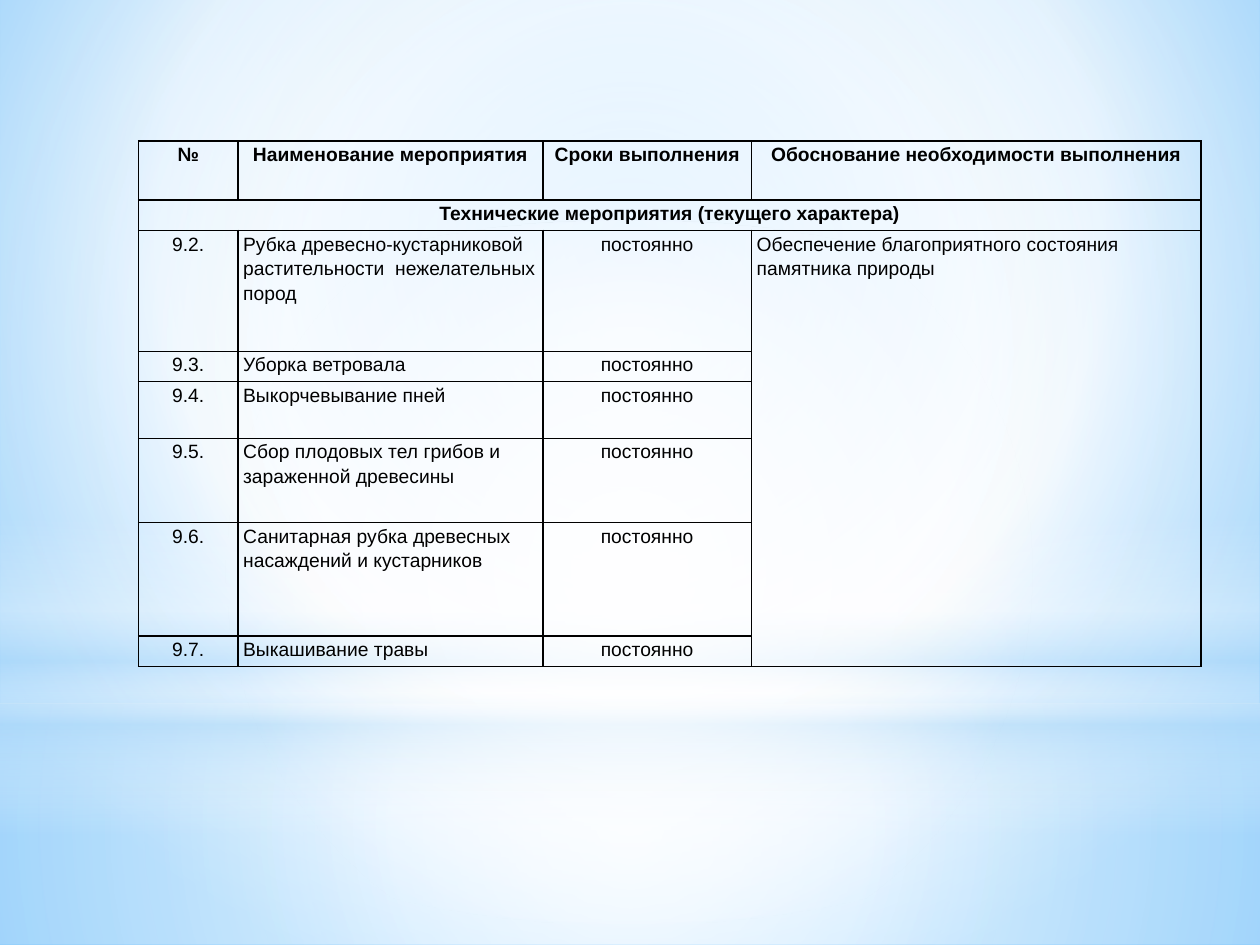
from dataclasses import dataclass
from typing import Any

from lxml.etree import SubElement
from pptx import Presentation
from pptx.dml.color import RGBColor
from pptx.enum.shapes import MSO_SHAPE as Preset
from pptx.enum.text import PP_ALIGN as Align
from pptx.oxml.ns import qn
from pptx.util import Pt

INK = "000000"
WHITE = "FFFFFF"
SKY = "B4DCFA"
CENTRE = (50, 50, 50, 50)
CELL_FORMAT = {"margin_left": Pt(3), "margin_right": Pt(3),
               "margin_top": 0, "margin_bottom": 0}
FONT_FORMAT = {"name": "Arial", "size": Pt(11)}
COLUMN_WIDTHS = (56.8, 174.3, 119.2, 256.8)
HEADINGS = ("№", "Наименование мероприятия", "Сроки выполнения",
            "Обоснование необходимости выполнения")
SECTION = "Технические мероприятия (текущего характера)"
TERM = "постоянно"
REASON = "Обеспечение благоприятного состояния памятника природы"


@dataclass(frozen=True)
class Stop:
    position: int
    colour: str
    opacity: int = 100


@dataclass(frozen=True)
class Glow:
    preset: Preset
    top: float
    height: float
    stops: tuple[Stop, ...]
    focus: tuple[int, ...] | None = CENTRE


@dataclass(frozen=True)
class Measure:
    title: str
    height: float


BACKDROP = (Stop(0, "9ED5FF"), Stop(60, WHITE), Stop(100, "5BB9FF"))
GLOWS = (
    Glow(Preset.RECTANGLE, 401.8, 138.2,
         (Stop(0, WHITE, 91), Stop(37, WHITE, 76), Stop(100, SKY, 79))),
    Glow(Preset.RECTANGLE, 0, 401.8,
         (Stop(0, WHITE, 89), Stop(48, WHITE, 62), Stop(100, SKY, 79))),
    Glow(Preset.RECTANGLE, 296.6, 180,
         (Stop(0, WHITE, 0), Stop(29, WHITE, 30), Stop(45, SKY, 40),
          Stop(55, WHITE, 26), Stop(65, SKY, 60), Stop(100, WHITE, 0)), None),
    Glow(Preset.OVAL, 126, 401.8, (Stop(0, WHITE), Stop(56, WHITE, 0))),
)
MEASURES = (
    Measure("Рубка древесно-кустарниковой растительности  нежелательных пород", 69.1),
    Measure("Уборка ветровала", 17.3),
    Measure("Выкорчевывание пней", 32.4),
    Measure("Сбор плодовых тел грибов и зараженной древесины", 48.2),
    Measure("Санитарная рубка древесных насаждений и кустарников", 64.8),
    Measure("Выкашивание травы", 17.3),
)
ROW_HEIGHTS = (33.8, 17.3, *(measure.height for measure in MEASURES))


def rgb(colour: str) -> RGBColor:
    return RGBColor.from_string(colour)


def apply_format(target: Any, values: dict[str, Any]) -> None:
    for attribute, value in values.items():
        setattr(target, attribute, value)


def set_gradient(owner: Any, element: Any, stops: tuple[Stop, ...],
                 focus: tuple[int, ...] | None) -> None:
    owner.fill.gradient()
    gradient = next(element.iter(qn("a:gradFill")))
    for child in list(gradient):
        gradient.remove(child)
    stop_list = SubElement(gradient, qn("a:gsLst"))
    for stop in stops:
        mark = SubElement(stop_list, qn("a:gs"), pos=str(stop.position * 1000))
        colour = SubElement(mark, qn("a:srgbClr"), val=stop.colour)
        if stop.opacity < 100:
            SubElement(colour, qn("a:alpha"), val=str(stop.opacity * 1000))
    if focus is None:
        SubElement(gradient, qn("a:lin"), ang="5400000", scaled="0")
    else:
        circle = SubElement(gradient, qn("a:path"), {"path": "circle"})
        SubElement(circle, qn("a:fillToRect"),
                   {side: str(share * 1000) for side, share in zip("ltrb", focus)})


def draw_glow(slide: Any, glow: Glow) -> None:
    light = slide.shapes.add_shape(glow.preset, 0, Pt(glow.top), Pt(720), Pt(glow.height))
    light.shadow.inherit = False
    light.line.fill.background()
    set_gradient(light, light.element, glow.stops, glow.focus)


def draw_borders(cell: Any) -> None:
    properties = cell._tc.get_or_add_tcPr()
    for side in "LRTB":
        border = SubElement(properties, qn(f"a:ln{side}"), w=str(Pt(1)))
        solid = SubElement(border, qn("a:solidFill"))
        SubElement(solid, qn("a:srgbClr"), val=INK)


def write_cell(cell: Any, wording: str, align: Align, bold: bool = False) -> None:
    paragraph = cell.text_frame.paragraphs[0]
    apply_format(paragraph, {"alignment": align, "line_spacing": 1.15})
    run = paragraph.add_run()
    run.text = wording
    apply_format(run.font, FONT_FORMAT | {"bold": bold})
    run.font.color.rgb = rgb(INK)


def draw_plan(slide: Any) -> None:
    plan = slide.shapes.add_table(
        len(ROW_HEIGHTS), len(COLUMN_WIDTHS), Pt(79.2), Pt(80.6),
        Pt(sum(COLUMN_WIDTHS)), Pt(sum(ROW_HEIGHTS))).table
    apply_format(plan, {"first_row": False, "horz_banding": False})
    for column, width in zip(plan.columns, COLUMN_WIDTHS):
        column.width = Pt(width)
    for row, height in zip(plan.rows, ROW_HEIGHTS):
        row.height = Pt(height)
    for cell in plan.iter_cells():
        draw_borders(cell)
        cell.fill.background()
        apply_format(cell, CELL_FORMAT)

    for column, heading in enumerate(HEADINGS):
        write_cell(plan.cell(0, column), heading, Align.CENTER, bold=True)
    plan.cell(1, 0).merge(plan.cell(1, 3))
    write_cell(plan.cell(1, 0), SECTION, Align.CENTER, bold=True)
    for row, measure in enumerate(MEASURES, start=2):
        write_cell(plan.cell(row, 0), f"9.{row}.", Align.CENTER)
        write_cell(plan.cell(row, 1), measure.title, Align.LEFT)
        write_cell(plan.cell(row, 2), TERM, Align.CENTER)
    plan.cell(2, 3).merge(plan.cell(len(ROW_HEIGHTS) - 1, 3))
    write_cell(plan.cell(2, 3), REASON, Align.LEFT)


def main() -> None:
    """Build the slide with the table of technical measures."""
    deck = Presentation()
    apply_format(deck, {"slide_width": Pt(720), "slide_height": Pt(540)})
    slide = deck.slides.add_slide(deck.slide_layouts[6])
    set_gradient(slide.background, slide.element, BACKDROP, (20, 10, 20, 60))
    for glow in GLOWS:
        draw_glow(slide, glow)
    draw_plan(slide)
    deck.save("out.pptx")


if __name__ == "__main__":
    main()
